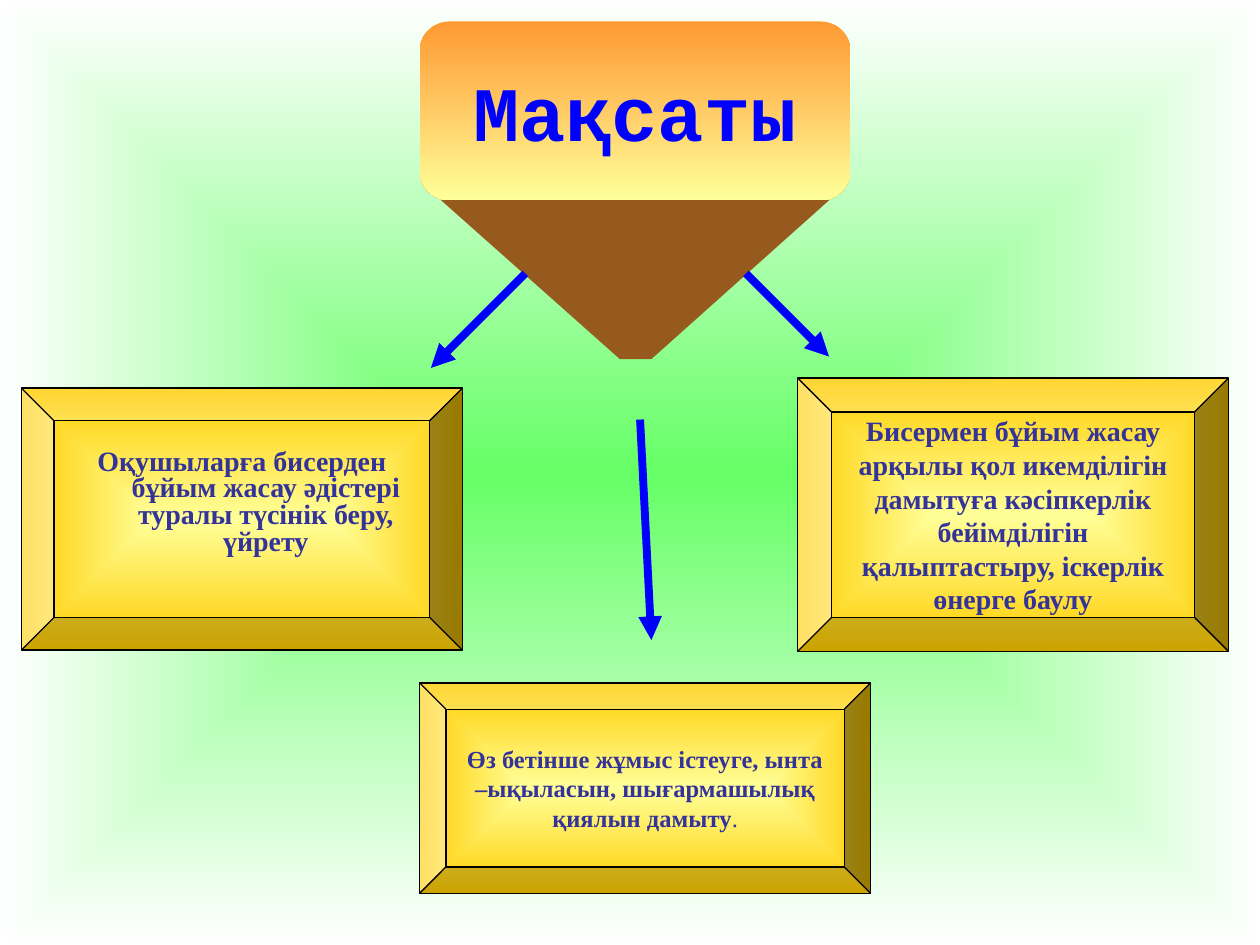
from dataclasses import dataclass
from typing import Optional

from lxml import etree
from pptx import Presentation
from pptx.dml.color import RGBColor as Rgb
from pptx.enum.shapes import MSO_CONNECTOR as Link, MSO_SHAPE as Kind
from pptx.enum.text import MSO_ANCHOR as Anchor, PP_ALIGN as Align
from pptx.oxml import parse_xml
from pptx.oxml.ns import nsdecls, qn
from pptx.util import Inches, Pt


@dataclass(frozen=True)
class Theme:
    back: tuple = ("66FF66", "FFFFFF")
    head: tuple = ("FF9933", "FFFF99")
    gold: tuple = ("FFFF99", "FFCC00")
    brown: str = "965A1E"
    blue: str = "0000FF"
    ink: str = "333399"
    edge: str = "000000"
    mono: str = "Courier New"
    serif: str = "Times New Roman"
    big: int = 44
    mid: int = 16
    small: int = 14


@dataclass(frozen=True)
class Run:
    text: str
    bold: bool = True


@dataclass(frozen=True)
class Goal:
    at: tuple
    size: int
    runs: tuple
    hang: float = 0
    lead: Optional[float] = None
    gap: float = 0
    foot: float = 0.05


@dataclass(frozen=True)
class Arrow:
    start: tuple
    end: tuple


T = Theme()
RADIAL = ('<a:path path="{}"><a:fillToRect l="50000" t="50000" '
          'r="50000" b="50000"/></a:path>')
DOWN = '<a:lin ang="5400000" scaled="1"/>'

GOALS = (
    Goal((6.33, 3, 3.42, 2.17), T.mid, (
        Run("Бисермен бұйым жасау арқылы қол икемділігін дамытуға кәсіпкерлік "
            "бейімділігін қалыптастыру, іскерлік өнерге баулу"),)),
    Goal((3.33, 5.42, 3.58, 1.67), T.small, (
        Run("Өз бетінше жұмыс істеуге, ынта –ықыласын, шығармашылық "
            "қиялын дамыту"),
        Run(".", False))),
    Goal((0.17, 3.08, 3.5, 2.08), T.mid, (
        Run("Оқушыларға бисерден бұйым жасау әдістері туралы түсінік беру, "
            "үйрету"),),
        hang=0.38, lead=0.8, gap=3.2, foot=0.3),
)
ARROWS = (
    Arrow((4.17, 2.17), (3.42, 2.92)),
    Arrow((5.08, 3.33), (5.17, 5.08)),
    Arrow((5.92, 2.17), (6.58, 2.83)),
)


def blend(fill, props, stops: tuple, shade: str) -> None:
    """Put a two-colour gradient in place of a solid fill."""
    fill.solid()
    first, last = stops
    grad = parse_xml(
        f'<a:gradFill {nsdecls("a")} rotWithShape="1"><a:gsLst>'
        f'<a:gs pos="0"><a:srgbClr val="{first}"/></a:gs>'
        f'<a:gs pos="100000"><a:srgbClr val="{last}"/></a:gs>'
        f'</a:gsLst>{shade}</a:gradFill>')
    props.replace(props.find(qn("a:solidFill")), grad)


def write(para, runs: tuple, size: int, face: str, color: str) -> None:
    para.alignment = Align.CENTER
    for item in runs:
        run = para.add_run()
        run.text = item.text
        font = run.font
        font.name, font.size, font.bold = face, Pt(size), item.bold
        font.color.rgb = Rgb.from_string(color)


def block(slide, kind, at: tuple, stops: tuple, shade: str):
    shape = slide.shapes.add_shape(kind, *map(Inches, at))
    shape.shadow.inherit = False
    blend(shape.fill, shape._element.spPr, stops, shade)
    shape.text_frame.word_wrap = True
    shape.text_frame.vertical_anchor = Anchor.MIDDLE
    return shape


def draw_head(slide) -> None:
    # Brown wedge below the title
    form = slide.shapes.build_freeform(Inches(3.4), Inches(1.5), scale=1.0)
    points = ((6.68, 1.5), (5.17, 2.85), (4.92, 2.85))
    form.add_line_segments([(Inches(x), Inches(y)) for x, y in points])
    wedge = form.convert_to_shape()
    wedge.shadow.inherit = False
    wedge.fill.solid()
    wedge.fill.fore_color.rgb = Rgb.from_string(T.brown)
    wedge.line.fill.background()
    # Title block
    box = block(slide, Kind.FLOWCHART_ALTERNATE_PROCESS,
                (3.33, 0.17, 3.42, 1.42), T.head, DOWN)
    box.line.fill.background()
    write(box.text_frame.paragraphs[0], (Run("Мақсаты"),),
          T.big, T.mono, T.blue)


def draw_goal(slide, goal: Goal) -> None:
    box = block(slide, Kind.BEVEL, goal.at, T.gold, RADIAL.format("rect"))
    box.adjustments[0] = 0.125
    box.line.color.rgb = Rgb.from_string(T.edge)
    box.line.width = Pt(0.75)
    box.text_frame.margin_bottom = Inches(goal.foot)
    para = box.text_frame.paragraphs[0]
    write(para, goal.runs, goal.size, T.serif, T.ink)
    if goal.lead:
        para.line_spacing = goal.lead
        para.space_before = Pt(goal.gap)
    if goal.hang:
        props = para._p.get_or_add_pPr()
        props.set("marL", str(Inches(goal.hang)))
        props.set("indent", str(-Inches(goal.hang)))


def draw_arrow(slide, arrow: Arrow) -> None:
    ends = map(Inches, arrow.start + arrow.end)
    link = slide.shapes.add_connector(Link.STRAIGHT, *ends)
    link.line.color.rgb = Rgb.from_string(T.blue)
    link.line.width = Pt(4.5)
    tip = etree.SubElement(link.line._get_or_add_ln(), qn("a:tailEnd"))
    tip.set("type", "triangle")
    etree.SubElement(link._element.spPr, qn("a:effectLst"))


def main() -> None:
    deck = Presentation()
    deck.slide_width, deck.slide_height = Inches(10), Inches(7.5)
    slide = deck.slides.add_slide(deck.slide_layouts[6])

    # Background
    fill = slide.background.fill
    blend(fill, slide._element.cSld.bg.bgPr, T.back, RADIAL.format("shape"))

    # Title, goals and arrows
    draw_head(slide)
    for goal in GOALS:
        draw_goal(slide, goal)
    for arrow in ARROWS:
        draw_arrow(slide, arrow)

    deck.save("out.pptx")


if __name__ == "__main__":
    main()
